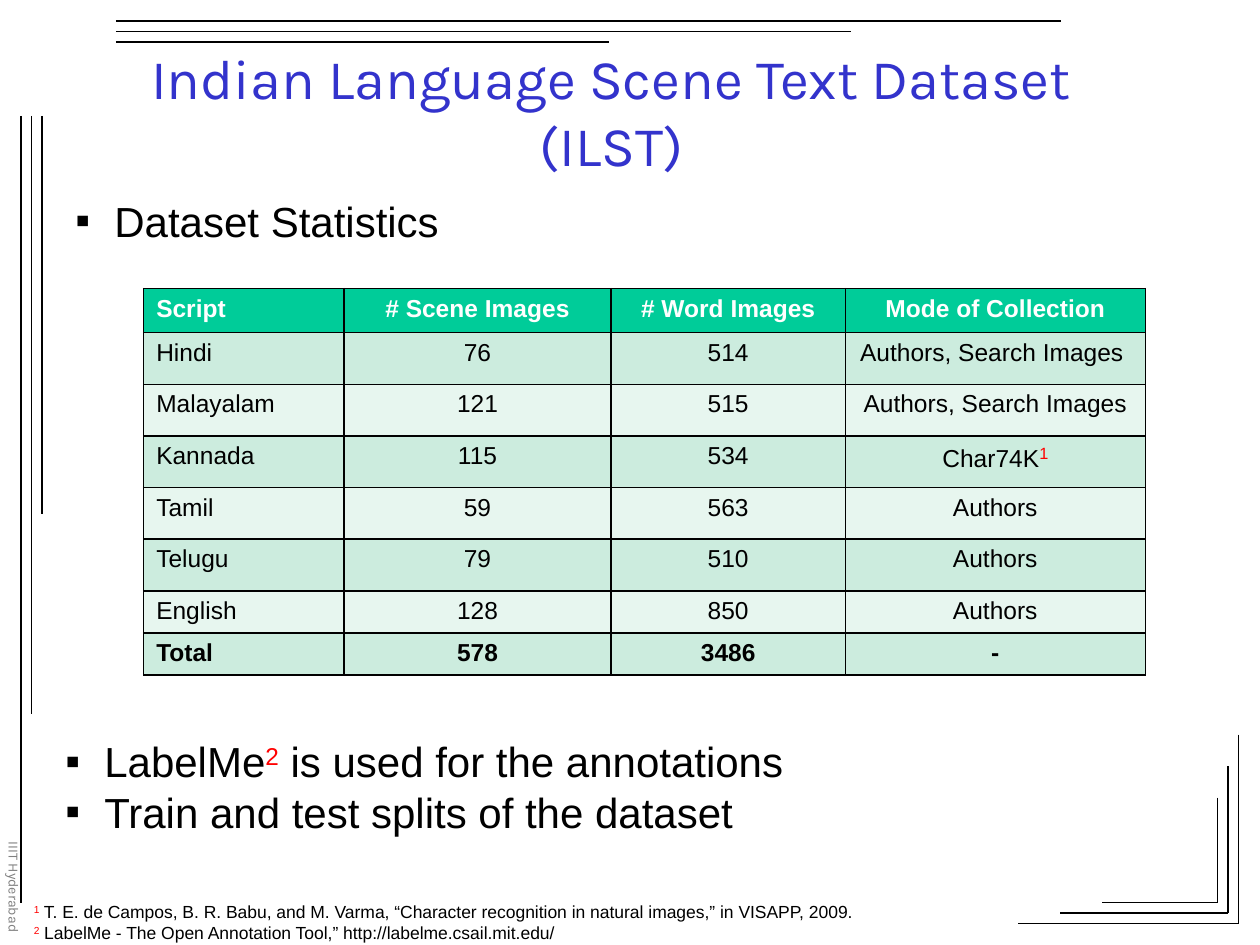
from lxml import etree
from pptx import Presentation
from pptx import util as u
from pptx.dml import color
from pptx.enum import shapes, text
from pptx.oxml import ns, xmlchemy

BLACK, WHITE, RED, GREY = "000000", "FFFFFF", "FF0000", "808080"
TITLE_BLUE, HEADER_GREEN = "3333CC", "00CC99"
BANDS = ("CCECDE", "E7F6EF")
STEP = 1 / 12
COLUMN_WIDTHS = (1.59, 2.12, 1.86, 2.38)
ROW_HEIGHTS = (0.35,) + (0.41,) * 5 + (0.33,) * 2
STATISTICS = (
    ("Script", "# Scene Images", "# Word Images", "Mode of Collection"),
    ("Hindi", "76", "514", "Authors, Search Images "),
    ("Malayalam", "121", "515", "Authors, Search Images"),
    ("Kannada", "115", "534", "Char74K^1"),
    ("Tamil", "59", "563", "Authors"),
    ("Telugu", "79", "510", "Authors"),
    ("English", "128", "850", "Authors"),
    ("Total", "578", "3486", "-"),
)


def rgb(value):
    """Turn a hex string into a colour."""
    return color.RGBColor.from_string(value)


def add_line(page, x1, y1, x2, y2):
    """Draw a thin black rule between two points in inches."""
    ends = [u.Inches(value) for value in (x1, y1, x2, y2)]
    rule = page.shapes.add_connector(shapes.MSO_CONNECTOR.STRAIGHT, *ends)
    rule.line.color.rgb = rgb(BLACK)
    rule.line.width = u.Pt(0.75)
    etree.SubElement(rule._element.spPr, ns.qn("a:effectLst"))


def add_frame(page):
    """Draw the three stepped groups of rules around the page."""
    for index, (across, down) in enumerate(((8.42, 7.17), (6.75, 5.67), (4.83, 4.08))):
        offset = (2 + index) * STEP
        add_line(page, 0.92, offset, across, offset)
        add_line(page, offset, 0.92, offset, down)
    for index in range(3):
        right, bottom = 9.83 - index * STEP, 7.33 - index * STEP
        add_line(page, 8.08 + index / 3, bottom, right, bottom)
        add_line(page, right, 5.83 + index / 4, right, bottom)


def style(font, size, hue=BLACK, name="Arial", bold=False):
    """Set the look of a font."""
    font.name, font.size, font.bold = name, u.Pt(size), bold
    font.color.rgb = rgb(hue)


def write(para, content, size, hue=BLACK, name="Arial", bold=False, mark_size=None):
    """Fill a paragraph, raising each one-character mark that follows a caret."""
    style(para.font, size, hue, name, bold)
    first, *rest = content.split("^")
    if first:
        para.add_run().text = first
    for part in rest:
        mark = para.add_run()
        mark.text = part[0]
        mark.font.color.rgb = rgb(RED)
        if mark_size:
            mark.font.size = u.Pt(mark_size)
        mark._r.get_or_add_rPr().set("baseline", "30000")
        if part[1:]:
            para.add_run().text = part[1:]


def add_bullet(para):
    """Give a paragraph a square bullet with a hanging indent."""
    props = para._p.get_or_add_pPr()
    props.set("marL", str(u.Inches(0.31)))
    props.set("indent", str(u.Inches(-0.31)))
    etree.SubElement(props, ns.qn("a:buFont")).set("typeface", "Arial")
    etree.SubElement(props, ns.qn("a:buChar")).set("char", "▪")


def add_text(page, place, lines, size, hue=BLACK, name="Arial", bullets=False):
    """Add a text box with one paragraph for each line."""
    box = page.shapes.add_textbox(*[u.Inches(value) for value in place])
    frame = box.text_frame
    frame.word_wrap = True
    for index, content in enumerate(lines):
        para = frame.add_paragraph() if index else frame.paragraphs[0]
        if bullets:
            add_bullet(para)
        write(para, content, size, hue, name)
    return box


def add_title(page, lines):
    """Place and format the title."""
    title = page.shapes.title
    title.left, title.top, title.width, title.height = [
        u.Inches(value) for value in (0.61, 0.43, 8.49, 0.9)]
    frame = title.text_frame
    frame.auto_size = text.MSO_AUTO_SIZE.NONE
    frame.vertical_anchor = text.MSO_ANCHOR.MIDDLE
    for index, content in enumerate(lines):
        para = frame.add_paragraph() if index else frame.paragraphs[0]
        para.alignment = text.PP_ALIGN.CENTER
        write(para, content, 32, TITLE_BLUE, "Karla")


def add_borders(cell):
    """Draw black borders on the four sides of a cell."""
    props = cell._tc.get_or_add_tcPr()
    for side in ("lnL", "lnR", "lnT", "lnB"):
        border = etree.SubElement(props, ns.qn("a:" + side), w=str(u.Pt(1)))
        fill = etree.SubElement(border, ns.qn("a:solidFill"))
        etree.SubElement(fill, ns.qn("a:srgbClr")).set("val", BLACK)


def add_statistics(page):
    """Add the table of dataset statistics."""
    place = (1.14, 2.29, sum(COLUMN_WIDTHS), sum(ROW_HEIGHTS))
    table = page.shapes.add_table(
        len(ROW_HEIGHTS), len(COLUMN_WIDTHS), *[u.Inches(value) for value in place]).table
    for column, width in zip(table.columns, COLUMN_WIDTHS):
        column.width = u.Inches(width)
    for row, height in zip(table.rows, ROW_HEIGHTS):
        row.height = u.Inches(height)
    last = len(STATISTICS) - 1
    for r, values in enumerate(STATISTICS):
        for c, value in enumerate(values):
            cell = table.cell(r, c)
            add_borders(cell)
            cell.fill.solid()
            cell.fill.fore_color.rgb = rgb(BANDS[(r - 1) % 2] if r else HEADER_GREEN)
            para = cell.text_frame.paragraphs[0]
            para.alignment = text.PP_ALIGN.CENTER if c else text.PP_ALIGN.LEFT
            write(para, value, 14, BLACK if r else WHITE, bold=r in (0, last), mark_size=16)


def main():
    """Build the slide and save it."""
    deck = Presentation()
    deck.slide_width, deck.slide_height = u.Inches(10), u.Inches(7.5)
    page = deck.slides.add_slide(deck.slide_layouts[5])
    add_frame(page)
    label = add_text(page, (-0.1, 6.58, 0.33, 0.92), ["IIIT Hyderabad"], 8, GREY, "Karla")
    label.text_frame._txBody.bodyPr.set("vert", "eaVert")
    add_text(page, (0.5, 1.5, 8.1, 0.5), ["Dataset Statistics"], 24, bullets=True)
    add_statistics(page)
    add_text(page, (0.17, 7.1, 7.33, 0.44), [
        "^1 T. E. de Campos, B. R. Babu, and M. Varma, “Character recognition in natural "
        "images,” in VISAPP, 2009.",
        "^2 LabelMe - The Open Annotation Tool,” http://labelme.csail.mit.edu/"], 10)
    add_text(page, (0.42, 5.79, 8.1, 0.91), [
        "LabelMe^2 is used for the annotations",
        "Train and test splits of the dataset"], 24, bullets=True)
    add_title(page, ["Indian Language Scene Text Dataset", "(ILST)"])
    deck.save("out.pptx")


if __name__ == "__main__":
    main()
